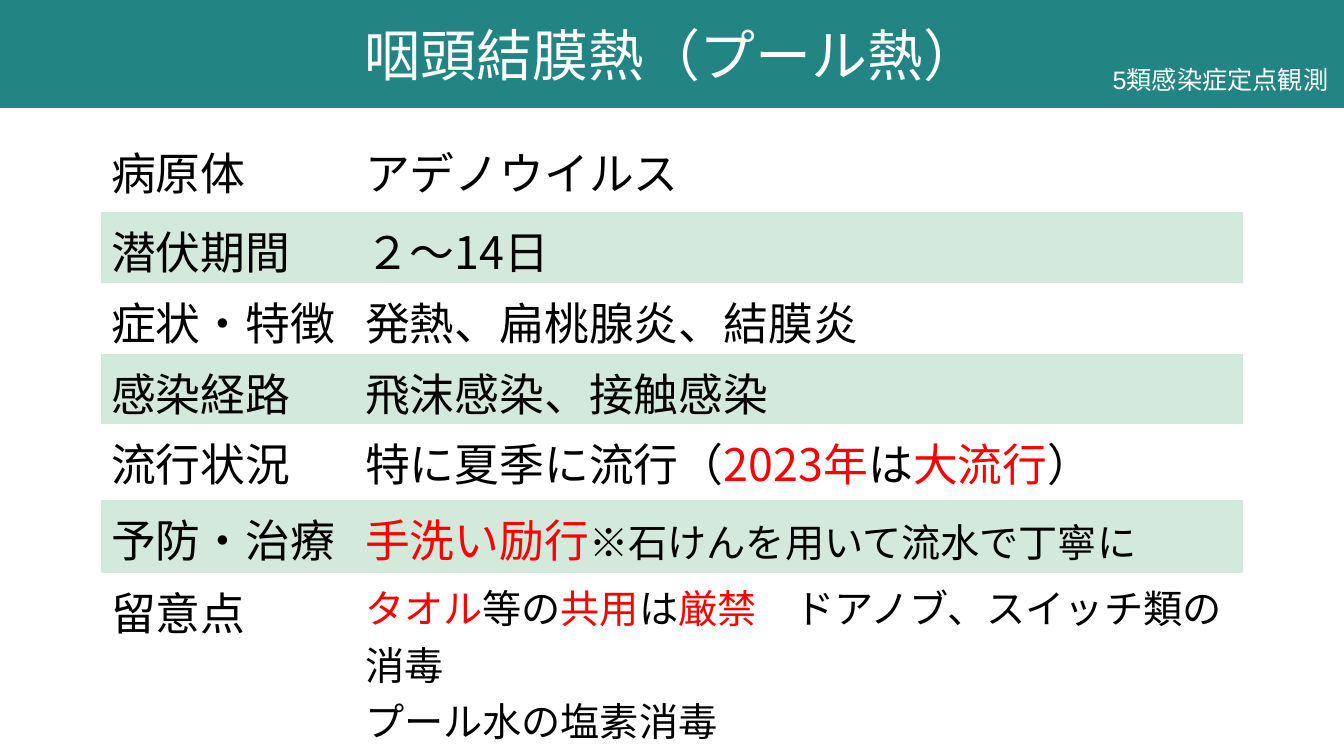
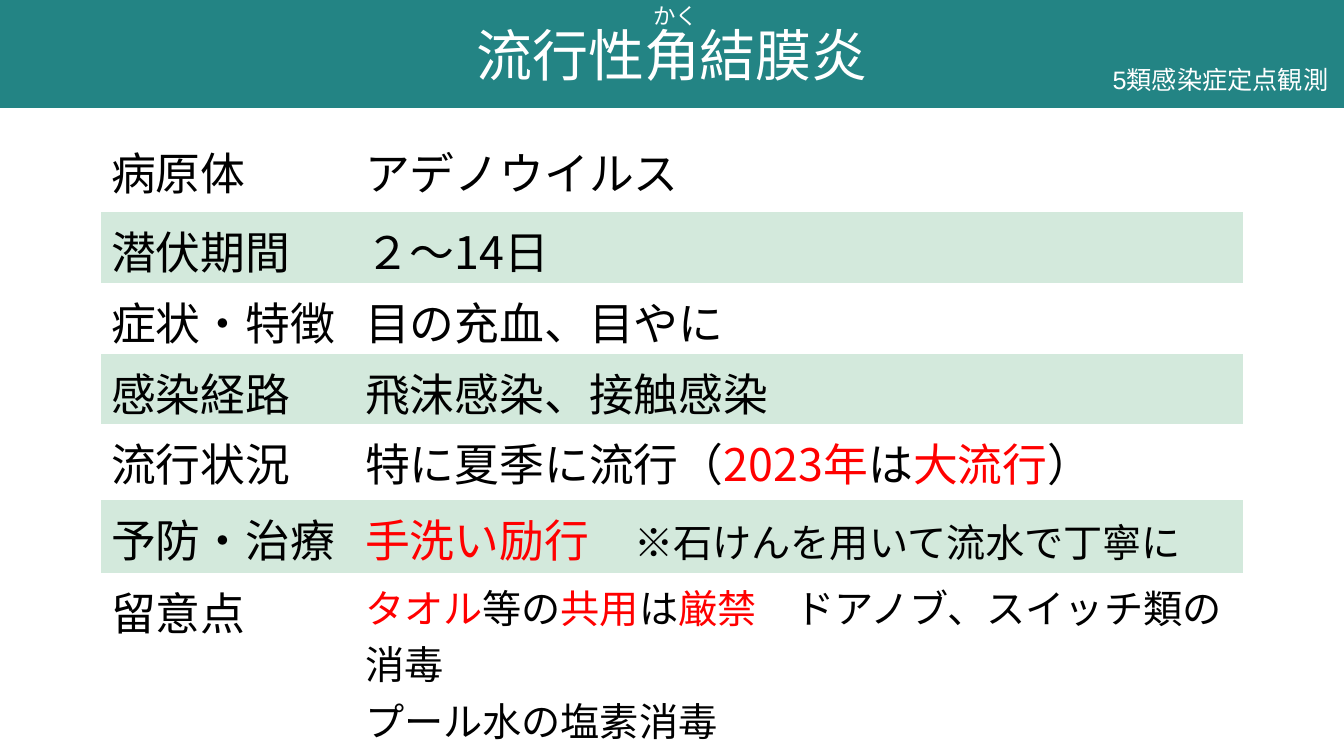
from pptx import Presentation, util as u
from pptx.dml.color import RGBColor
from pptx.enum import shapes, text
from pptx.oxml.ns import qn
from lxml import etree

PX = 914400 / 100.8
COLOR = {"band": "238484", "stripe": "D3E9DC", "ink": "000000",
         "alert": "FF0000", "white": "FFFFFF"}
NOTO, ARIAL = "Noto Sans CJK JP", "Arial"
PLAIN_STYLE = "{2D5ABB26-0587-4C30-8999-92F81FD0307C}"

BAND = (0, 0, 1344, 108)
LABEL = (1094, 59, 253, 40)
RUBY = (632, -3, 88, 37)
TABLE = (101, 133)
COLS = (254, 888)
ROWS = (79, 71, 71, 70, 76, 73)

# Words between asterisks are red. A cell is a list of paragraphs,
# each a list of (size, words).
BIG, SMALL = 32, 28
HEADS = ("病原体", "潜伏期間", "症状・特徴", "感染経路",
         "流行状況", "予防・治療", "留意点")
CARE = [[(SMALL, "*タオル*等の*共用*は*厳禁　*ドアノブ、スイッチ類の消毒")],
        [(SMALL, "プール水の塩素消毒")]]
SLIDES = [
    {"title": "咽頭結膜熱（プール熱）", "ruby": None, "last": 144,
     "signs": "発熱、扁桃腺炎、結膜炎", "wash": "*手洗い励行*"},
    {"title": "流行性角結膜炎", "ruby": "かく", "last": 121,
     "signs": "目の充血、目やに", "wash": "*手洗い励行　*"},
]


def px(*nums):
    return [u.Emu(round(n * PX)) for n in nums]


def rgb(name):
    return RGBColor.from_string(COLOR[name])


def line(words, size=BIG):
    return [[(size, words)]]


def write(frame, paras, face, ink, align):
    """Fill a text frame, turning marked words red."""
    for i, parts in enumerate(paras):
        para = frame.paragraphs[0] if i == 0 else frame.add_paragraph()
        para.alignment = align
        for size, words in parts:
            for n, bit in enumerate(words.split("*")):
                if not bit:
                    continue
                run = para.add_run()
                run.text = bit
                for key, val in {"size": u.Pt(size), "name": face}.items():
                    setattr(run.font, key, val)
                run.font.color.rgb = rgb("alert" if n % 2 else ink)
                east = etree.SubElement(run.font._element, qn("a:ea"))
                east.set("typeface", NOTO)


def add_band(slide, title):
    band = slide.shapes.add_shape(shapes.MSO_SHAPE.RECTANGLE, *px(*BAND))
    band.shadow.inherit = False
    band.fill.solid()
    band.fill.fore_color.rgb = rgb("band")
    band.line.fill.background()
    band.text_frame.vertical_anchor = text.MSO_ANCHOR.MIDDLE
    write(band.text_frame, line(title, 40), NOTO, "white", text.PP_ALIGN.CENTER)


def add_note(slide, box, words, size):
    frame = slide.shapes.add_textbox(*px(*box)).text_frame
    frame.word_wrap = True
    write(frame, line(words, size), ARIAL, "white", text.PP_ALIGN.CENTER)


def add_facts(slide, facts, last):
    rows = ROWS + (last,)
    frame = slide.shapes.add_table(len(rows), len(COLS),
                                   *px(*TABLE, sum(COLS), sum(rows)))
    next(frame.element.iter(qn("a:tableStyleId"))).text = PLAIN_STYLE
    table = frame.table
    for col, wide in zip(table.columns, px(*COLS)):
        col.width = wide
    for r, (row, high) in enumerate(zip(table.rows, px(*rows))):
        row.height = high
        for cell, paras in zip(row.cells, (line(HEADS[r]), facts[r])):
            cell.margin_bottom = 0
            if r % 2:
                cell.fill.solid()
                cell.fill.fore_color.rgb = rgb("stripe")
            else:
                cell.fill.background()
            write(cell.text_frame, paras, NOTO, "ink", text.PP_ALIGN.LEFT)


def main():
    deck = Presentation()
    deck.slide_width, deck.slide_height = px(1344, 756)
    for data in SLIDES:
        slide = deck.slides.add_slide(deck.slide_layouts[6])
        add_band(slide, data["title"])
        if data["ruby"]:
            add_note(slide, RUBY, data["ruby"], 16)
        facts = [line("アデノウイルス"), line("２～14日"),
                 line(data["signs"]), line("飛沫感染、接触感染"),
                 line("特に夏季に流行（*2023年*は*大流行*）"),
                 [[(BIG, data["wash"]), (SMALL, "※石けんを用いて流水で丁寧に")]],
                 CARE]
        add_facts(slide, facts, data["last"])
        add_note(slide, LABEL, "5類感染症定点観測", 18)
    deck.save("out.pptx")


if __name__ == "__main__":
    main()
